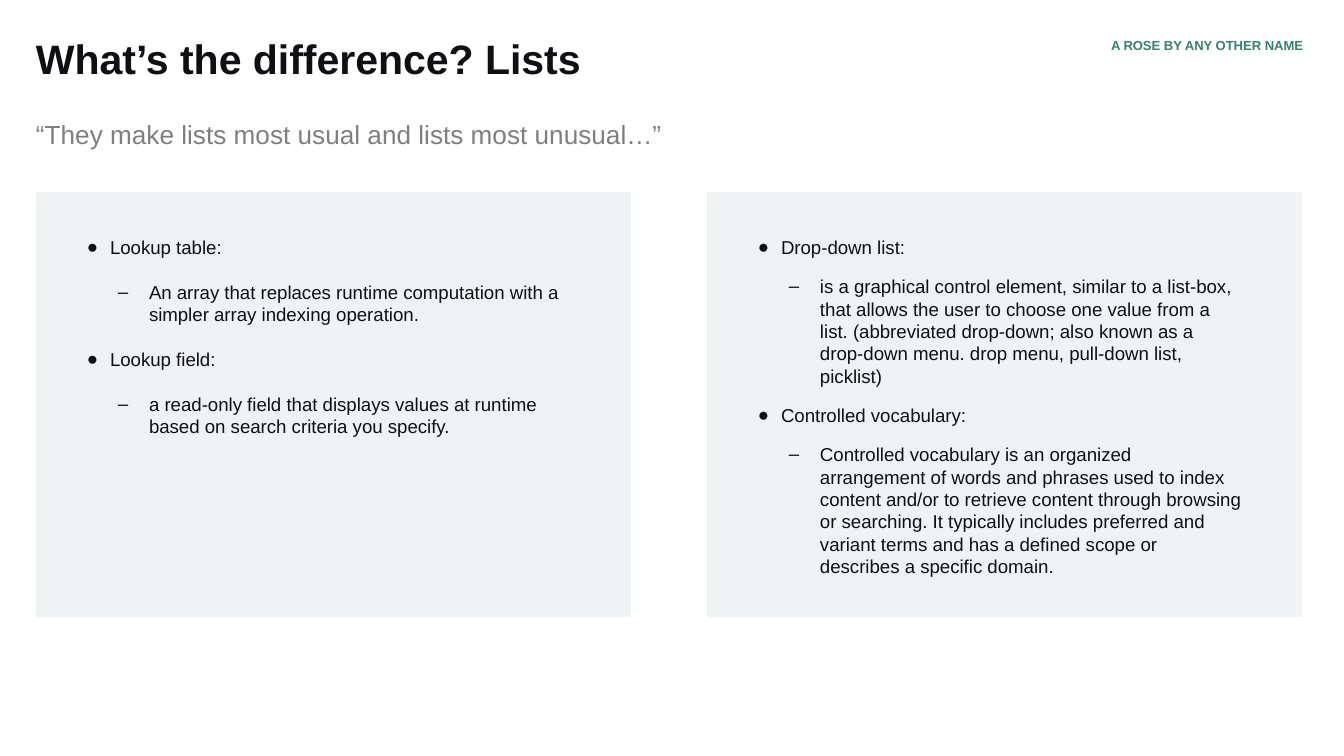
"""Build the slide that compares kinds of lists in two bulleted cards."""
import lxml.etree
import pptx
import pptx.dml.color
import pptx.enum.shapes
import pptx.enum.text
import pptx.oxml.ns
import pptx.util

PX = 914400 / 134.4
COLORS = {"ink": "0F0F14", "grey": "7F7F7F", "green": "37816E", "card": "F0F3F3"}
ALIGN = pptx.enum.text.PP_ALIGN
HEADINGS = [
    ("What’s the difference? Lists", (36, 39, 1074, 79), 13,
     {"size": 22, "bold": True, "color": "ink"}, {"line_spacing": 0.9}),
    ("“They make lists most usual and lists most unusual…”", (36, 118, 953, 63), 13,
     {"size": 14, "color": "grey"}, {}),
    ("A ROSE BY ANY OTHER NAME", (1017, 39, 286, 22), 0,
     {"size": 7, "bold": True, "color": "green"},
     {"line_spacing": 0.9, "alignment": ALIGN.RIGHT}),
]
LEVELS = [
    {"marL": 27, "indent": -23, "bullet": "●"},
    {"marL": 66, "indent": -31, "bullet": "–"},
]
CARDS = [
    (707, 9, [
        ("Drop-down list:",
         "is a graphical control element, similar to a list-box, that allows the user to "
         "choose one value from a list. (abbreviated drop-down; also known as a drop-down "
         "menu. drop menu, pull-down list, picklist)"),
        ("Controlled vocabulary:",
         "Controlled vocabulary is an organized arrangement of words and phrases used to "
         "index content and/or to retrieve content through browsing or searching. It "
         "typically includes preferred and variant terms and has a defined scope or "
         "describes a specific domain."),
    ]),
    (36, 12, [
        ("Lookup table:",
         "An array that replaces runtime computation with a simpler array indexing operation."),
        ("Lookup field:",
         "a read-only field that displays values at runtime based on search criteria "
         "you specify."),
    ]),
]


def px(length):
    return pptx.util.Emu(round(length * PX))


def rgb(name):
    return pptx.dml.color.RGBColor.from_string(COLORS[name])


def set_values(target, values):
    for name, value in values.items():
        setattr(target, name, value)


def add_text_box(page, place, top, right):
    box = page.shapes.add_textbox(*map(px, place))
    set_values(box.text_frame, {
        "word_wrap": True,
        "vertical_anchor": pptx.enum.text.MSO_ANCHOR.TOP,
        "margin_left": 0,
        "margin_top": px(top),
        "margin_right": px(right),
        "margin_bottom": px(13),
    })
    return box.text_frame


def add_span(para, text, size, color, bold=False):
    span = para.add_run()
    span.text = text
    set_values(span.font, {"name": "Arial", "size": pptx.util.Pt(size), "bold": bold})
    span.font.color.rgb = rgb(color)


def add_heading(page, text, place, right, font, layout):
    para = add_text_box(page, place, 0, right).paragraphs[0]
    set_values(para, layout)
    add_span(para, text, **font)


def add_bullet(para, level):
    style = LEVELS[level]
    para.level = level
    properties = para._p.get_or_add_pPr()
    for name in ("marL", "indent"):
        properties.set(name, str(px(style[name])))
    tag = pptx.oxml.ns.qn
    color = lxml.etree.SubElement(properties, tag("a:buClr"))
    lxml.etree.SubElement(color, tag("a:srgbClr"), val=COLORS["ink"])
    lxml.etree.SubElement(properties, tag("a:buFont"), typeface="Arial")
    lxml.etree.SubElement(properties, tag("a:buChar"), char=style["bullet"])


def add_card(page, left, gap, entries):
    card = page.shapes.add_shape(pptx.enum.shapes.MSO_SHAPE.RECTANGLE,
                                 *map(px, (left, 192, 595, 425)))
    card.shadow.inherit = False
    card.fill.solid()
    card.fill.fore_color.rgb = rgb("card")
    card.line.fill.background()

    frame = add_text_box(page, (left + 47, 223, 500, 344), 13, 13)
    lines = [(level, text) for entry in entries for level, text in enumerate(entry)]
    for index, (level, text) in enumerate(lines):
        para = frame.add_paragraph() if index else frame.paragraphs[0]
        add_bullet(para, level)
        set_values(para, {
            "line_spacing": pptx.util.Pt(12),
            "space_before": pptx.util.Pt(gap if index else 0),
        })
        add_span(para, text, 10, "ink")
    para.space_after = pptx.util.Pt(gap)


def main():
    deck = pptx.Presentation()
    set_values(deck, {"slide_width": px(1344), "slide_height": px(756)})
    page = deck.slides.add_slide(deck.slide_layouts[6])
    for heading in HEADINGS:
        add_heading(page, *heading)
    for card in CARDS:
        add_card(page, *card)
    deck.save("out.pptx")


if __name__ == "__main__":
    main()
